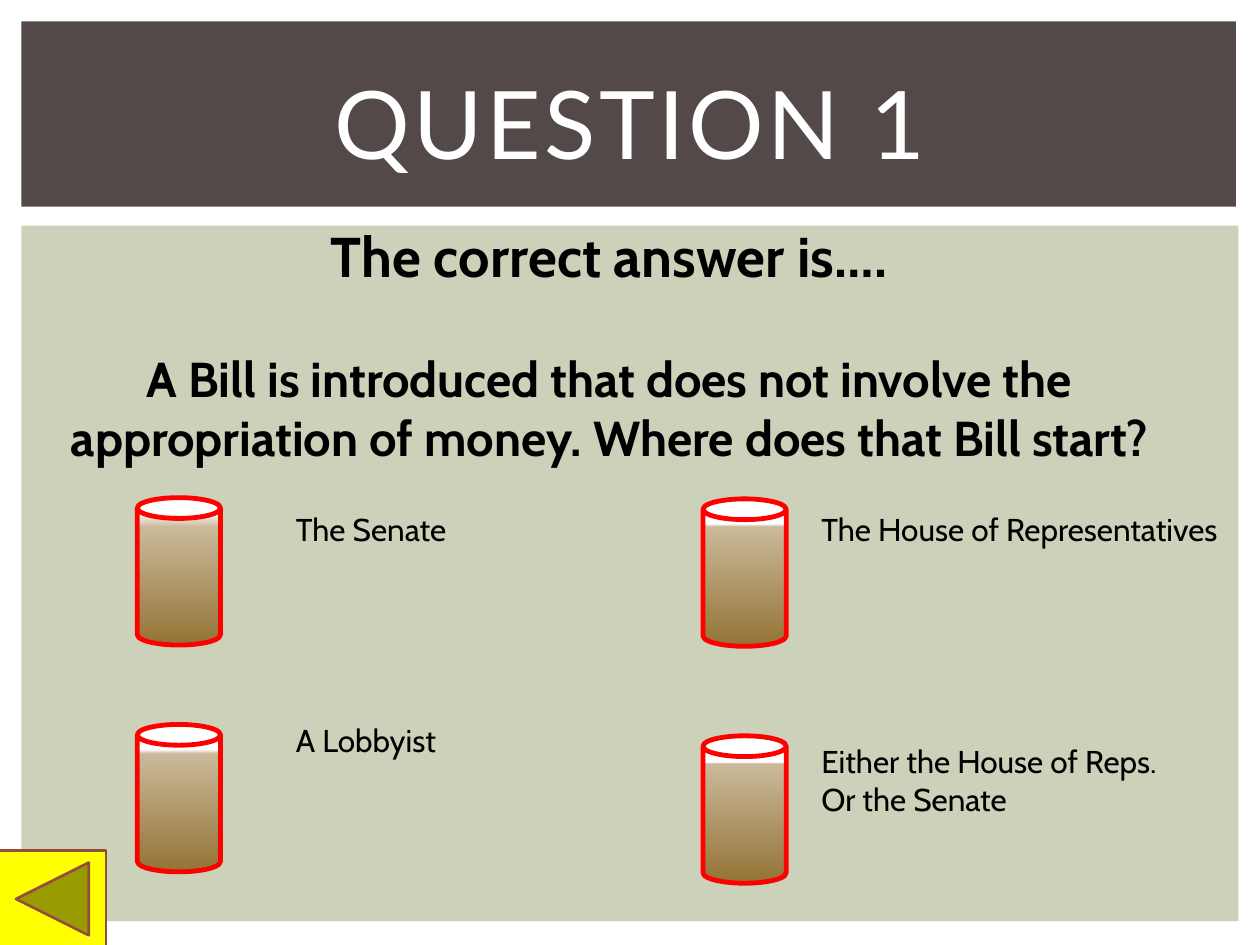
import copy
import pptx
import pptx.util
import pptx.dml.color
import pptx.enum.shapes
import pptx.enum.text
import pptx.oxml.ns

Inches, Pt = pptx.util.Inches, pptx.util.Pt
SHAPE = pptx.enum.shapes.MSO_SHAPE
ALIGN = pptx.enum.text.PP_ALIGN
ANCHOR = pptx.enum.text.MSO_ANCHOR

HUES = {
    "panel": "CCD1B9", "band": "534949", "white": "FFFFFF", "black": "000000",
    "red": "FF0000", "tan": "CAB99A", "brown": "947335",
    "yellow": "FFFF00", "rust": "924E3C",
}

TITLE = "QUESTION 1"
# text, size, space before
PROMPT = [
    ("The correct answer is….", 32, 0),
    ("A Bill is introduced that does not involve the appropriation of money. "
     "Where does that Bill start?", 28, 34),
]
# text, column, can top, end of white, start of tan, label top, width, height
ANSWERS = [
    ("The Senate", 0, 3.95, 0.10, 0.20, 4, 2.17, 0.4),
    ("A Lobbyist", 0, 5.75, 0.17, 0.20, 5.67, 2.58, 0.4),
    ("Either the House of Reps. Or the Senate", 1, 5.84, 0.18, 0.19, 5.84, 3.17, 0.71),
    ("The House of Representatives", 1, 3.96, 0.17, 0.19, 4, 3.42, 0.4),
]
COLUMNS = [(1.09, 2.25), (5.58, 6.42)]  # can left, label left
CAN = (0.66, 1.17)


def hue(name):
    return pptx.dml.color.RGBColor.from_string(HUES[name])


def add_form(slide, kind, box, fill=None, line=None, width=0):
    form = slide.shapes.add_shape(kind, *map(Inches, box))
    form.shadow.inherit = False
    if fill:
        form.fill.solid()
        form.fill.fore_color.rgb = hue(fill)
    if line:
        form.line.color.rgb = hue(line)
        form.line.width = Pt(width)
    else:
        form.line.fill.background()
    return form


def shade(form, stops):
    """Fill a shape with a three-stop gradient running downwards."""
    form.fill.gradient()
    form.fill.gradient_angle = 270
    first = form._element.spPr.find(".//" + pptx.oxml.ns.qn("a:gs"))
    first.addnext(copy.deepcopy(first))
    for stop, (place, name) in zip(form.fill.gradient_stops, stops):
        stop.position = place
        stop.color.rgb = hue(name)


def add_text(slide, box, lines, font="Cabin", color="black", bold=False,
             align=ALIGN.LEFT, anchor=ANCHOR.TOP):
    frame = slide.shapes.add_textbox(*map(Inches, box)).text_frame
    frame.word_wrap = True
    frame.vertical_anchor = anchor
    for i, (text, size, gap) in enumerate(lines):
        para = frame.add_paragraph() if i else frame.paragraphs[0]
        para.alignment = align
        para.space_before = Pt(gap)
        run = para.add_run()
        run.text = text
        run.font.name = font
        run.font.size = Pt(size)
        run.font.bold = bold
        run.font.color.rgb = hue(color)
    return frame


def main():
    deck = pptx.Presentation()
    deck.slide_width, deck.slide_height = Inches(10), Inches(7.5)
    slide = deck.slides.add_slide(deck.slide_layouts[6])

    add_form(slide, SHAPE.RECTANGLE, (0.17, 1.79, 9.66, 5.52), "panel")
    add_form(slide, SHAPE.RECTANGLE, (0.17, 0.17, 9.64, 1.47), "band")
    title = add_text(slide, (0.42, 0.39, 9.17, 1.15), [(TITLE, 54, 0)], "Lato",
                     "white", align=ALIGN.CENTER, anchor=ANCHOR.MIDDLE)
    title.paragraphs[0].runs[0].font._element.set("spc", "200")
    add_text(slide, (0.08, 1.71, 9.51, 2.05), PROMPT, bold=True, align=ALIGN.CENTER)

    for text, col, top, white, tan, y, wide, high in ANSWERS:
        left, x = COLUMNS[col]
        can = add_form(slide, SHAPE.CAN, (left, top, *CAN), line="red", width=2.75)
        shade(can, [(white, "white"), (tan, "tan"), (1, "brown")])
        add_text(slide, (x, y, wide, high), [(text, 18, 0)])

    add_form(slide, SHAPE.ACTION_BUTTON_BACK_OR_PREVIOUS,
             (-0.01, 6.75, 0.85, 0.77), "yellow", "rust", 1.5)
    deck.save("out.pptx")


if __name__ == "__main__":
    main()
